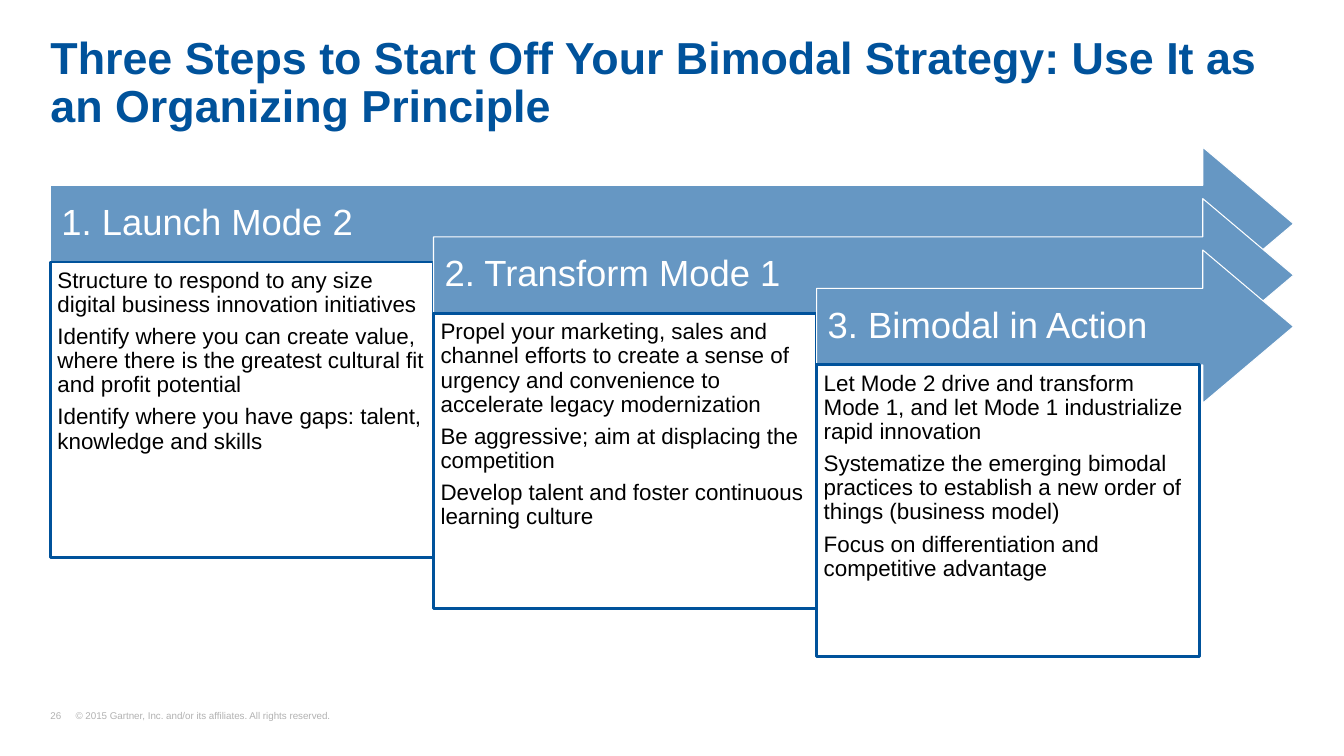
from dataclasses import dataclass

from lxml.etree import SubElement
from pptx import Presentation
from pptx.dml.color import RGBColor
from pptx.enum.shapes import MSO_SHAPE
from pptx.enum.text import MSO_ANCHOR, MSO_AUTO_SIZE, PP_ALIGN
from pptx.oxml.ns import qn
from pptx.shapes.autoshape import Shape
from pptx.slide import Slide
from pptx.util import Inches, Pt

NAVY, SKY, WHITE, BLACK, GRAY = "00529B", "6697C3", "FFFFFF", "000000", "B2B2B2"
LEFT, TOP = 0.5, 1.46
STEP_X, STEP_Y = 3.8, 0.51
ARROW_RIGHT, ARROW_H, HEAD_W = 12.83, 1.52, 0.9
BOX_DROP = ARROW_H * 0.75


@dataclass
class Step:
    heading: str
    points: list[str]
    box_h: float = 2.93


@dataclass
class TextStyle:
    size: float
    color: str
    insets: tuple[float, float, float, float]
    anchor: MSO_ANCHOR = MSO_ANCHOR.TOP
    after: float = 0
    bold: bool = False


TITLE = TextStyle(32, NAVY, (0, 0.1, 0, 0), bold=True)
HEADING = TextStyle(26, WHITE, (0.11, 0, 0.66, 0), MSO_ANCHOR.MIDDLE)
POINTS = TextStyle(16, BLACK, (0.07, 0.07, 0.07, 0.07), after=5.6)
FOOTER = TextStyle(7, GRAY, (0, 0, 0, 0), MSO_ANCHOR.BOTTOM)

STEPS = [
    Step("1. Launch Mode 2", [
        "Structure to respond to any size digital business innovation initiatives",
        "Identify where you can create value, where there is the greatest "
        "cultural fit and profit potential",
        "Identify where you have gaps: talent, knowledge and skills",
    ]),
    Step("2. Transform Mode 1", [
        "Propel your marketing, sales and channel efforts to create a sense of "
        "urgency and convenience to accelerate legacy modernization",
        "Be aggressive; aim at displacing the competition",
        "Develop talent and foster continuous learning culture",
    ]),
    Step("3. Bimodal in Action", [
        "Let Mode 2 drive and transform Mode 1, and let Mode 1 industrialize "
        "rapid innovation",
        "Systematize the emerging bimodal practices to establish a new order of "
        "things (business model)",
        "Focus on differentiation and competitive advantage",
    ], 2.89),
]


def rgb(color: str) -> RGBColor:
    return RGBColor.from_string(color)


def set_all(target: object, values: dict) -> None:
    for name, value in values.items():
        setattr(target, name, value)


def write(sp: Shape, lines: list[str], style: TextStyle,
          tab: float | None = None) -> None:
    """Fill a shape with one paragraph per line, with an optional tab stop."""
    tf = sp.text_frame
    left, top, right, bottom = map(Inches, style.insets)
    set_all(tf, {
        "word_wrap": True, "auto_size": MSO_AUTO_SIZE.NONE,
        "vertical_anchor": style.anchor, "margin_left": left,
        "margin_top": top, "margin_right": right, "margin_bottom": bottom,
    })
    for i, line in enumerate(lines):
        p = tf.paragraphs[0] if i == 0 else tf.add_paragraph()
        if tab is not None:
            tabs = SubElement(p._p.get_or_add_pPr(), qn("a:tabLst"))
            SubElement(tabs, qn("a:tab"), pos=str(Inches(tab)), algn="l")
        set_all(p, {"alignment": PP_ALIGN.LEFT, "line_spacing": 0.9,
                    "space_before": Pt(0), "space_after": Pt(style.after)})
        r = p.add_run()
        r.text = line
        set_all(r.font, {"name": "Arial", "size": Pt(style.size),
                         "bold": style.bold})
        r.font.color.rgb = rgb(style.color)


def add_panel(s: Slide, kind: MSO_SHAPE, box: tuple[float, float, float, float],
              fill: str, line: str, weight: float) -> Shape:
    sp = s.shapes.add_shape(kind, *map(Inches, box))
    sp.shadow.inherit = False
    sp.fill.solid()
    sp.fill.fore_color.rgb = rgb(fill)
    sp.line.color.rgb = rgb(line)
    sp.line.width = Pt(weight)
    return sp


def add_step(s: Slide, index: int, step: Step) -> None:
    x, y = LEFT + index * STEP_X, TOP + index * STEP_Y
    arrow = add_panel(s, MSO_SHAPE.RIGHT_ARROW, (x, y, ARROW_RIGHT - x, ARROW_H),
                      SKY, WHITE, 0.75)
    arrow.adjustments[1] = HEAD_W / ARROW_H
    write(arrow, [step.heading], HEADING)
    box = add_panel(s, MSO_SHAPE.RECTANGLE, (x, y + BOX_DROP, STEP_X, step.box_h),
                    WHITE, NAVY, 2)
    write(box, step.points, POINTS)


def main() -> None:
    prs = Presentation()
    set_all(prs, {"slide_width": Inches(13.33), "slide_height": Inches(7.5)})
    s = prs.slides.add_slide(prs.slide_layouts[5])

    title = s.shapes.title
    set_all(title, {"left": Inches(LEFT), "top": Inches(0.25),
                    "width": Inches(12.33), "height": Inches(1.07)})
    write(title, ["Three Steps to Start Off Your Bimodal Strategy: "
                  "Use It as an Organizing Principle"], TITLE)

    for i, step in enumerate(STEPS):
        add_step(s, i, step)

    footer = s.shapes.add_textbox(*map(Inches, (LEFT, 7.05, 3.35, 0.11)))
    write(footer, ["26\t© 2015 Gartner, Inc. and/or its affiliates. "
                   "All rights reserved."], FOOTER, tab=0.25)

    prs.save("out.pptx")


if __name__ == "__main__":
    main()
